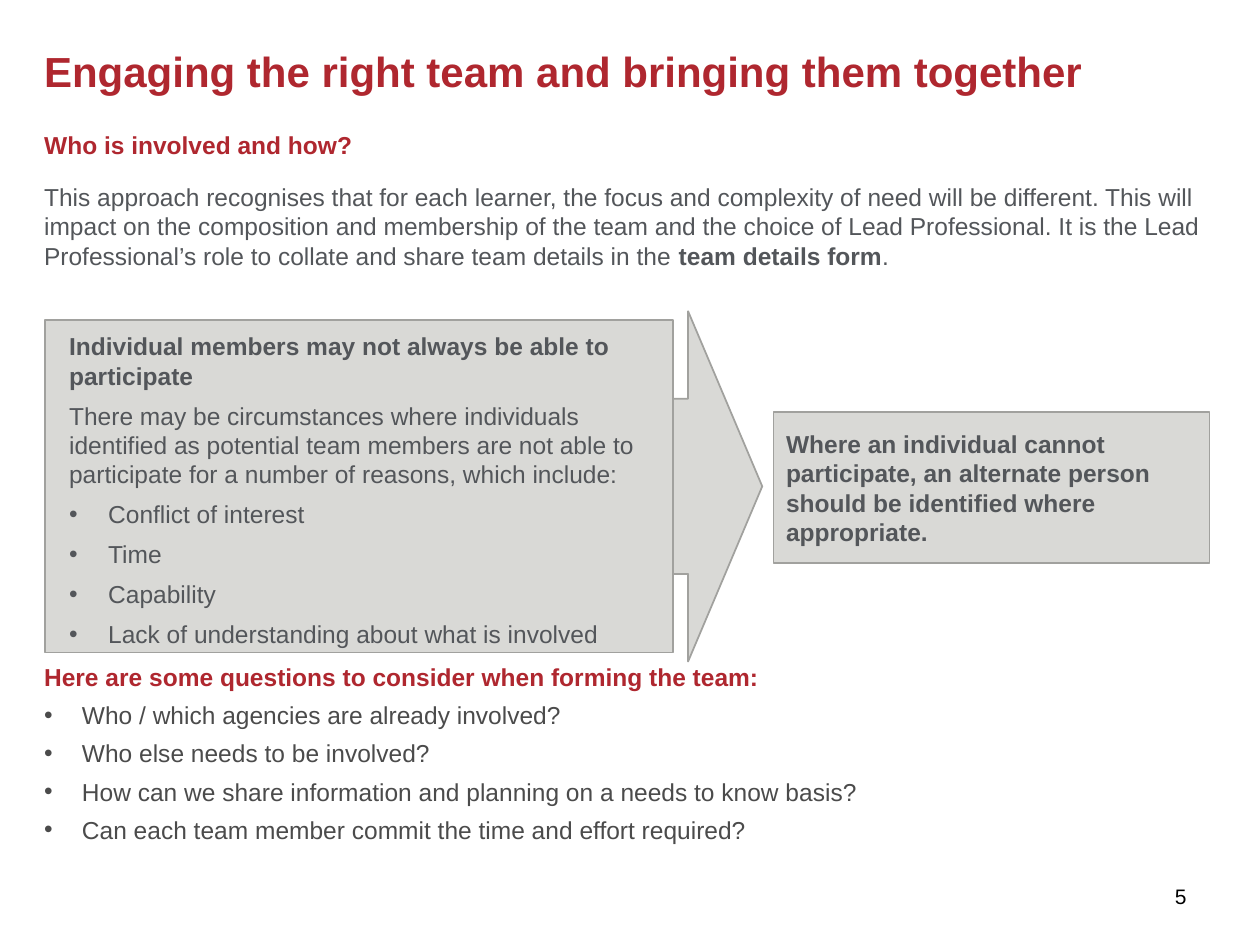
from dataclasses import dataclass

from lxml.etree import SubElement
from pptx import Presentation
from pptx.dml.color import RGBColor
from pptx.enum.shapes import MSO_SHAPE
from pptx.enum.text import MSO_ANCHOR, MSO_AUTO_SIZE, PP_ALIGN
from pptx.oxml.ns import qn
from pptx.util import Inches, Pt


@dataclass(frozen=True)
class Theme:
    font: str = "Arial"
    red: str = "AF272F"
    slate: str = "53565A"
    charcoal: str = "4B4B4B"
    black: str = "000000"
    panel: str = "D9D9D6"
    outline: str = "A1A19E"
    title_size: int = 24
    text_size: int = 14
    number_size: int = 12


THEME = Theme()

REASONS = [
    "Conflict of interest",
    "Time",
    "Capability",
    "Lack of understanding about what is involved",
]
QUESTIONS = [
    "Who / which agencies are already involved?",
    "Who else needs to be involved?",
    "How can we share information and planning on a needs to know basis?",
    "Can each team member commit the time and effort required?",
]


def place(shape, left, top, width, height):
    shape.left, shape.top = Inches(left), Inches(top)
    shape.width, shape.height = Inches(width), Inches(height)


def prepare_frame(shape, margin=None, anchor=MSO_ANCHOR.TOP,
                  auto_size=MSO_AUTO_SIZE.NONE):
    frame = shape.text_frame
    frame.word_wrap = True
    frame.auto_size = auto_size
    frame.vertical_anchor = anchor
    if margin is not None:
        frame.margin_left = frame.margin_right = Inches(margin)
        frame.margin_top = frame.margin_bottom = Inches(margin)
    return frame


def set_bullet(paragraph, indent):
    """Hang a round bullet by indent inches, or remove bullets at zero."""
    properties = paragraph._p.get_or_add_pPr()
    properties.set("marL", str(Inches(indent)))
    properties.set("indent", str(-Inches(indent)))
    if indent:
        SubElement(properties, qn("a:buFont"), typeface=THEME.font)
        SubElement(properties, qn("a:buChar"), char="•")
    else:
        SubElement(properties, qn("a:buNone"))


def add_paragraph(frame, runs, color, size=THEME.text_size, before=0, after=0,
                  indent=0, level=0, align=PP_ALIGN.LEFT, line_spacing=1.0):
    """Add a paragraph of (text, bold) runs; the first one gets no space before."""
    first = frame.paragraphs[0]
    is_first = not first.runs
    paragraph = first if is_first else frame.add_paragraph()
    paragraph.level = level
    paragraph.alignment = align
    paragraph.line_spacing = line_spacing
    paragraph.space_before = Pt(0 if is_first else before)
    paragraph.space_after = Pt(after)
    set_bullet(paragraph, indent)
    for text, bold in runs:
        run = paragraph.add_run()
        run.text = text
        run.font.name = THEME.font
        run.font.size = Pt(size)
        run.font.bold = bold
        run.font.color.rgb = RGBColor.from_string(color)


def add_panel(slide, preset, left, top, width, height):
    panel = slide.shapes.add_shape(
        preset, Inches(left), Inches(top), Inches(width), Inches(height))
    panel.shadow.inherit = False
    panel.fill.solid()
    panel.fill.fore_color.rgb = RGBColor.from_string(THEME.panel)
    panel.line.color.rgb = RGBColor.from_string(THEME.outline)
    panel.line.width = Pt(1)
    return panel


def add_text_box(slide, left, top, width, height, **frame_options):
    box = slide.shapes.add_textbox(
        Inches(left), Inches(top), Inches(width), Inches(height))
    return prepare_frame(box, **frame_options)


def fill_title(title):
    place(title, 0.35, 0.41, 9.25, 0.86)
    add_paragraph(prepare_frame(title, margin=0),
                  [("Engaging the right team and bringing them together", True)],
                  THEME.red, THEME.title_size, line_spacing=0.9)


def fill_body(body):
    place(body, 0.35, 1.03, 9.25, 6.24)
    frame = prepare_frame(body, margin=0)
    add_paragraph(frame, [("Who is involved and how?", True)], THEME.red, after=3)
    add_paragraph(frame, [
        ("This approach recognises that for each learner, the focus and "
         "complexity of need will be different. This will impact on the "
         "composition and membership of the team and the choice of Lead "
         "Professional. It is the Lead Professional’s role to collate and "
         "share team details in the ", False),
        ("team details form", True),
        (".", False),
    ], THEME.slate, before=10)
    # The space before this heading leaves room for the panels
    add_paragraph(
        frame,
        [("Here are some questions to consider when forming the team:", True)],
        THEME.red, before=224)
    for question in QUESTIONS:
        add_paragraph(frame, [(question, False)], THEME.charcoal,
                      before=5, indent=0.3, level=1)


def add_reasons(slide):
    add_panel(slide, MSO_SHAPE.RECTANGLE, 0.36, 2.54, 4.98, 2.64)
    frame = add_text_box(slide, 0.45, 2.58, 4.98, 2.64,
                         auto_size=MSO_AUTO_SIZE.SHAPE_TO_FIT_TEXT)
    spacing = {"before": 3, "after": 3}
    add_paragraph(
        frame,
        [("Individual members may not always be able to participate", True)],
        THEME.slate, **spacing)
    add_paragraph(frame, [
        ("There may be circumstances where individuals identified as potential "
         "team members are not able to participate for a number of reasons, "
         "which include:", False),
    ], THEME.slate, **spacing)
    for reason in REASONS:
        add_paragraph(frame, [(reason, False)], THEME.slate, indent=0.31, **spacing)


def add_outcome(slide):
    outcome = add_panel(slide, MSO_SHAPE.RECTANGLE, 6.14, 3.27, 3.46, 1.2)
    add_paragraph(prepare_frame(outcome, anchor=MSO_ANCHOR.MIDDLE), [
        ("Where an individual cannot participate, an alternate person should "
         "be identified where appropriate.", True),
    ], THEME.slate)


def main():
    presentation = Presentation()
    presentation.slide_width = Inches(10)
    presentation.slide_height = Inches(7.5)
    slide = presentation.slides.add_slide(presentation.slide_layouts[1])

    # Title and running text
    fill_title(slide.shapes.title)
    fill_body(slide.placeholders[1])

    # Arrow leading from the reasons to the outcome
    arrow = add_panel(slide, MSO_SHAPE.RIGHT_ARROW, 4.98, 2.47, 1.07, 2.78)
    arrow.adjustments[0] = 0.5
    arrow.adjustments[1] = 0.55
    add_reasons(slide)
    add_outcome(slide)

    # Page number
    page_number = add_text_box(slide, 9.13, 6.91, 0.48, 0.4,
                               anchor=MSO_ANCHOR.MIDDLE)
    add_paragraph(page_number, [("5", False)], THEME.black, THEME.number_size,
                  align=PP_ALIGN.CENTER)

    presentation.save("out.pptx")


if __name__ == "__main__":
    main()
